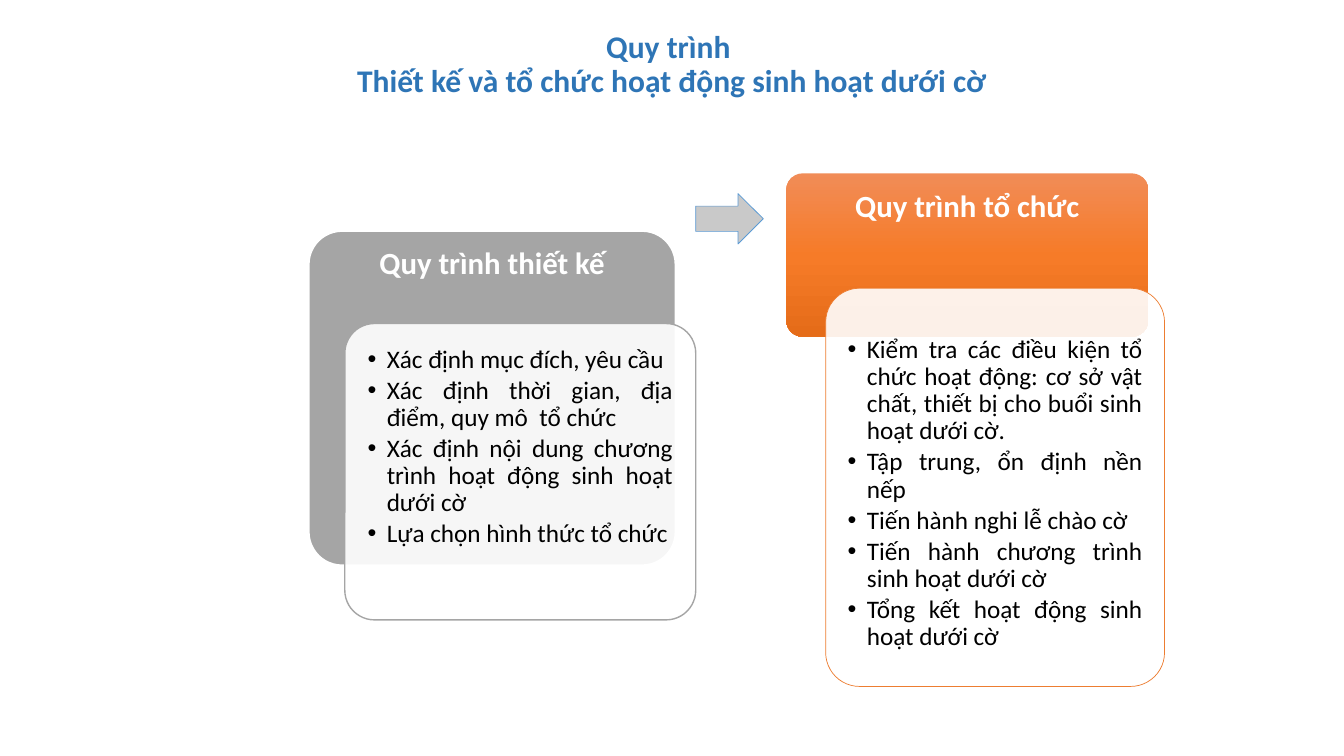
from copy import deepcopy

from lxml.etree import SubElement
from pptx import Presentation
from pptx.dml.color import RGBColor
from pptx.enum.shapes import MSO_SHAPE as SHAPE
from pptx.enum.text import MSO_ANCHOR as ANCHOR, MSO_AUTO_SIZE, PP_ALIGN as ALIGN
from pptx.oxml.ns import qn
from pptx.util import Inches, Pt

WHITE, BLACK, GREY, ORANGE = "FFFFFF", "000000", "A5A5A5", "ED7D31"
CORNER = 0.1
CORNER_INSET = CORNER * 0.29  # share of the short side kept free of text


def color(code):
    return RGBColor.from_string(code)


def write(frame, lines, size=18, ink=BLACK, bold=False, align=ALIGN.CENTER,
          anchor=ANCHOR.TOP, after=0, bullet=None, margins=None):
    frame.word_wrap = True
    frame.auto_size = MSO_AUTO_SIZE.NONE
    frame.vertical_anchor = anchor
    if margins:
        (frame.margin_left, frame.margin_top,
         frame.margin_right, frame.margin_bottom) = map(Inches, margins)
    for number, line in enumerate(lines):
        paragraph = frame.add_paragraph() if number else frame.paragraphs[0]
        paragraph.text = line
        paragraph.alignment = align
        paragraph.line_spacing = 0.9
        paragraph.space_before = Pt(0)
        paragraph.space_after = Pt(after)
        if bullet:
            props = paragraph._p.get_or_add_pPr()
            props.set("marL", str(Inches(0.19)))
            props.set("indent", str(Inches(-0.19)))
            SubElement(props, qn("a:buFont"), typeface="Arial")
            SubElement(props, qn("a:buChar"), char=bullet)
        for run in paragraph.runs:
            run.font.name = "Calibri"
            run.font.size = Pt(size)
            run.font.bold = bold
            run.font.color.rgb = color(ink)


deck = Presentation()
deck.slide_width, deck.slide_height = Inches(13.33), Inches(7.5)
COL, ROW = deck.slide_width / 100, deck.slide_height / 100
GRID = (COL, ROW, COL, ROW)  # left, top, width, height in hundredths
slide = deck.slides.add_slide(deck.slide_layouts[5])

# Title
title = slide.shapes.title
title.left, title.top, title.width, title.height = (
    int(share * unit) for share, unit in zip((11.1, 3.07, 77.8, 11.07), GRID))
write(title.text_frame, ["Quy trình \vThiết kế và tổ chức hoạt động sinh hoạt dưới cờ"],
      size=22.5, ink="2E75B6", bold=True, anchor=ANCHOR.MIDDLE)

# Each stage: heading, its place, fill stops and edge, then the steps card
stages = [
    ("Quy trình thiết kế", (22.96, 30.53, 27.31, 44.27), [GREY], WHITE,
     (25.66, 42.8, 26.11, 39.2), GREY, 1, (0.14, 0.14, 0.14, 0.14),
     ["Xác định mục đích, yêu cầu",
      "Xác định thời gian, địa điểm, quy mô  tổ chức",
      "Xác định nội dung chương trình hoạt động sinh hoạt dưới cờ",
      "Lựa chọn hình thức tổ chức"]),
    ("Quy trình tổ chức", (58.51, 22.93, 26.93, 21.6),
     ["F18C57", "F67B28", "E56C19"], None,
     (61.44, 38.13, 25.21, 52.67), ORANGE, 0.5, (0.12, 0.38, 0.12, 0.12),
     ["Kiểm tra các điều kiện tổ chức hoạt động: cơ sở vật chất, "
      "thiết bị cho buổi sinh hoạt dưới cờ.",
      "Tập trung, ổn định nền nếp",
      "Tiến hành nghi lễ chào cờ",
      "Tiến hành chương trình sinh hoạt dưới cờ",
      "Tổng kết hoạt động sinh hoạt dưới cờ"]),
]

for heading, place, stops, edge, card_place, card_edge, card_width, margins, steps in stages:
    # Coloured heading panel
    panel = slide.shapes.add_shape(
        SHAPE.ROUNDED_RECTANGLE, *(int(s * u) for s, u in zip(place, GRID)))
    panel.adjustments[0] = CORNER
    panel.shadow.inherit = False
    if len(stops) == 1:
        panel.fill.solid()
        panel.fill.fore_color.rgb = color(stops[0])
    else:
        panel.fill.gradient()
        panel.fill.gradient_angle = 270
        first = panel.fill.gradient_stops[0]._gs
        first.addnext(deepcopy(first))
        for number, (stop, code) in enumerate(zip(panel.fill.gradient_stops, stops)):
            stop.position = number / (len(stops) - 1)
            stop.color.rgb = color(code)
    if edge:
        panel.line.color.rgb = color(edge)
        panel.line.width = Pt(1.5)
    else:
        panel.line.fill.background()
    inset = 0.17 - CORNER_INSET * min(panel.width, panel.height) / Inches(1)
    write(panel.text_frame, [heading], size=22, ink=WHITE, bold=True,
          margins=(inset, inset, inset, 0))

    # Translucent card with the steps
    card = slide.shapes.add_shape(
        SHAPE.ROUNDED_RECTANGLE, *(int(s * u) for s, u in zip(card_place, GRID)))
    card.adjustments[0] = CORNER
    card.shadow.inherit = False
    card.fill.solid()
    card.fill.fore_color.rgb = color(WHITE)
    SubElement(card._element.spPr.find(qn("a:solidFill"))[0], qn("a:alpha"), val="90000")
    card.line.color.rgb = color(card_edge)
    card.line.width = Pt(card_width)
    write(card.text_frame, steps, align=ALIGN.JUSTIFY, after=2.7, bullet="•",
          margins=margins)

# Arrow from design to delivery
arrow = slide.shapes.add_shape(
    SHAPE.RIGHT_ARROW, *(int(s * u) for s, u in zip((51.76, 25.6, 5.03, 6.67), GRID)))
arrow.shadow.inherit = False
arrow.fill.solid()
arrow.fill.fore_color.rgb = color("C9C9C9")
arrow.line.color.rgb = color("5B9BD5")
arrow.line.width = Pt(0.5)

deck.save("out.pptx")
